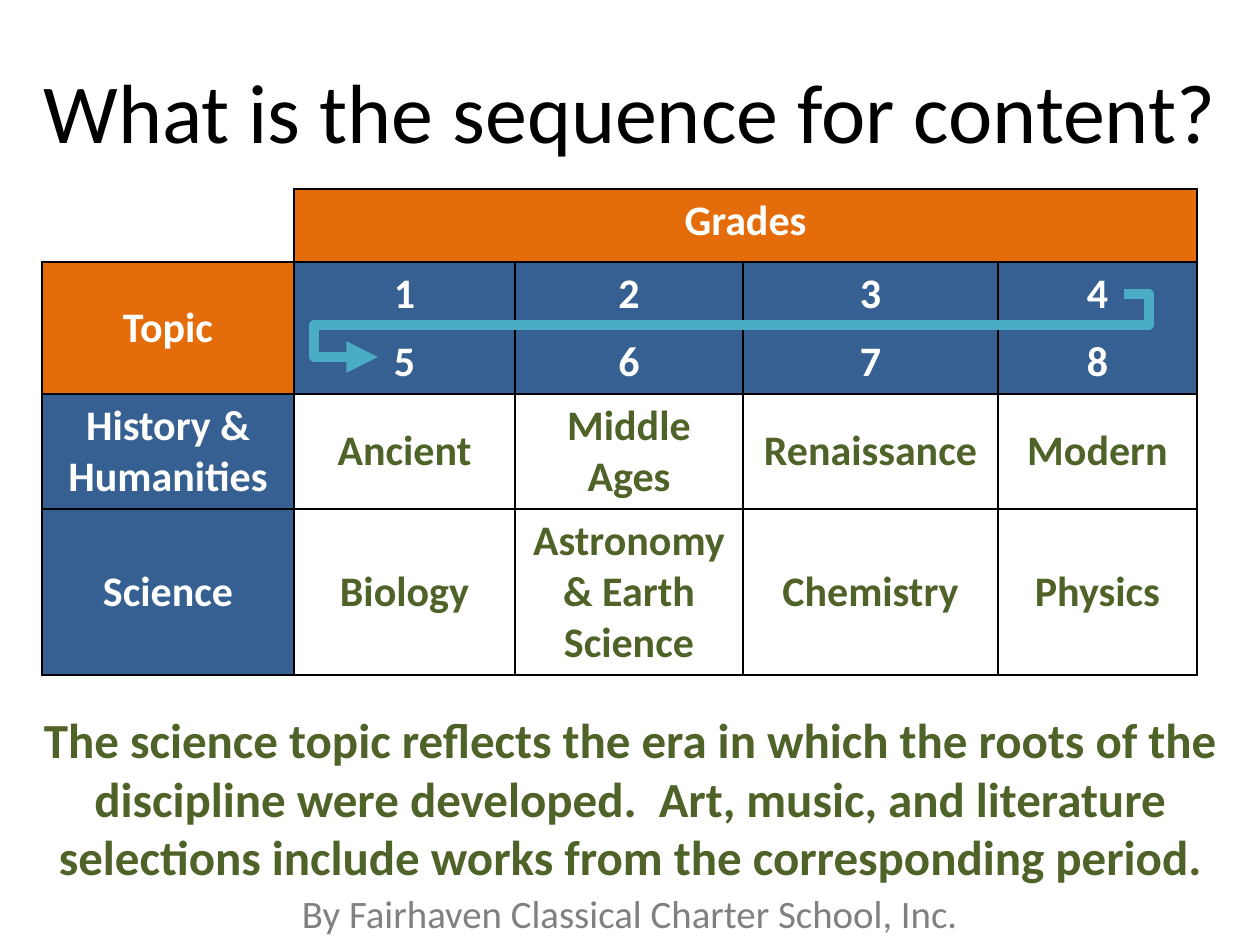
"""Build a slide showing the sequence of content by grade."""
from lxml.etree import SubElement as Sub
from pptx import Presentation
from pptx.dml.color import RGBColor
from pptx.enum.shapes import MSO_CONNECTOR as Conn
from pptx.enum.text import MSO_ANCHOR as Anchor, PP_ALIGN as Align
from pptx.oxml.ns import qn
from pptx.util import Emu, Pt

WHITE, BLACK, GREY = "FFFFFF", "000000", "808080"
ORANGE, BLUE, GREEN, TEAL = "E46C0A", "376092", "4F6228", "4BACC6"

TITLE = "What is the sequence for content?"
NOTE = ("The science topic reflects the era in which the roots of the discipline "
        "were developed.  Art, music, and literature selections include works "
        "from the corresponding period.")
CREDIT = "By Fairhaven Classical Charter School, Inc."
ROWS = [
    ["", "Grades", "", "", ""],
    ["Topic", "1\n5", "2\n6", "3\n7", "4\n8"],
    ["History & Humanities", "Ancient", "Middle Ages", "Renaissance", "Modern"],
    ["Science", "Biology", "Astronomy & Earth Science", "Chemistry", "Physics"],
]
WIDTHS = [252, 221, 228, 255, 199]
HEIGHTS = [73, 132, 115, 166]
# begin x, begin y, end x, end y, bend, arrowhead
BENDS = [(1124, 294, 315, 325, -3100, False), (378, 357, 315, 325, 101200, True)]


def px(n):
    return Emu(round(n * 914400 / 126))


def color(code):
    return RGBColor.from_string(code)


def style(par, size, code, bold=False):
    par.alignment = Align.CENTER
    font = par.font
    font.name, font.size, font.bold = "Calibri", Pt(size), bold
    font.color.rgb = color(code)


def label(slide, text, top, high, size, code, bold=False, anchor=Anchor.TOP):
    frame = slide.shapes.add_textbox(0, px(top), px(1260), px(high)).text_frame
    frame.word_wrap, frame.vertical_anchor = True, anchor
    frame.text = text
    style(frame.paragraphs[0], size, code, bold)
    return frame.paragraphs[0]


def border(cell, sides):
    props = cell._tc.get_or_add_tcPr()
    for at, side in enumerate(sides):
        line = props.makeelement(qn(f"a:ln{side}"), {"w": str(Pt(1))})
        Sub(Sub(line, qn("a:solidFill")), qn("a:srgbClr"), val=BLACK)
        props.insert(at, line)


def look(row, col):
    if row == 0:
        return (ORANGE, WHITE) if col else (WHITE, WHITE)
    if row == 1:
        return (BLUE, WHITE) if col else (ORANGE, WHITE)
    return (WHITE, GREEN) if col else (BLUE, WHITE)


def grid(slide):
    table = slide.shapes.add_table(len(ROWS), len(WIDTHS), px(42), px(189),
                                   px(sum(WIDTHS)), px(sum(HEIGHTS))).table
    table.first_row = table.horz_banding = False
    for col, wide in zip(table.columns, WIDTHS):
        col.width = px(wide)
    for r, (row, high) in enumerate(zip(ROWS, HEIGHTS)):
        table.rows[r].height = px(high)
        for c, text in enumerate(row):
            cell = table.cell(r, c)
            fill, ink = look(r, c)
            cell.fill.solid()
            cell.fill.fore_color.rgb = color(fill)
            border(cell, "LRTB" if r or c else "RB")
            cell.text = text
            if r > 1 or (r and not c):
                cell.vertical_anchor = Anchor.MIDDLE
            for n, par in enumerate(cell.text_frame.paragraphs):
                style(par, 24, ink, True)
                par.space_before = Pt(10 * n)
    table.cell(0, 1).merge(table.cell(0, 4))


def bend(slide, x1, y1, x2, y2, turn, arrow):
    link = slide.shapes.add_connector(Conn.ELBOW, px(x1), px(y1), px(x2), px(y2))
    link.line.color.rgb, link.line.width = color(TEAL), Pt(6)
    props = link._element.spPr
    Sub(props.find(".//" + qn("a:avLst")), qn("a:gd"), name="adj1", fmla=f"val {turn}")
    if arrow:
        Sub(link.line._get_or_add_ln(), qn("a:headEnd"), type="triangle")
    Sub(props, qn("a:effectLst"))


def main():
    deck = Presentation()
    deck.slide_width, deck.slide_height = px(1260), px(945)
    slide = deck.slides.add_slide(deck.slide_layouts[6])
    label(slide, CREDIT, 892, 53, 22.2, GREY).line_spacing = 0.8
    label(slide, TITLE, 42, 136, 48, BLACK, anchor=Anchor.MIDDLE)
    grid(slide)
    for spot in BENDS:
        bend(slide, *spot)
    label(slide, NOTE, 703, 190, 28, GREEN, True)
    deck.save("out.pptx")


if __name__ == "__main__":
    main()
